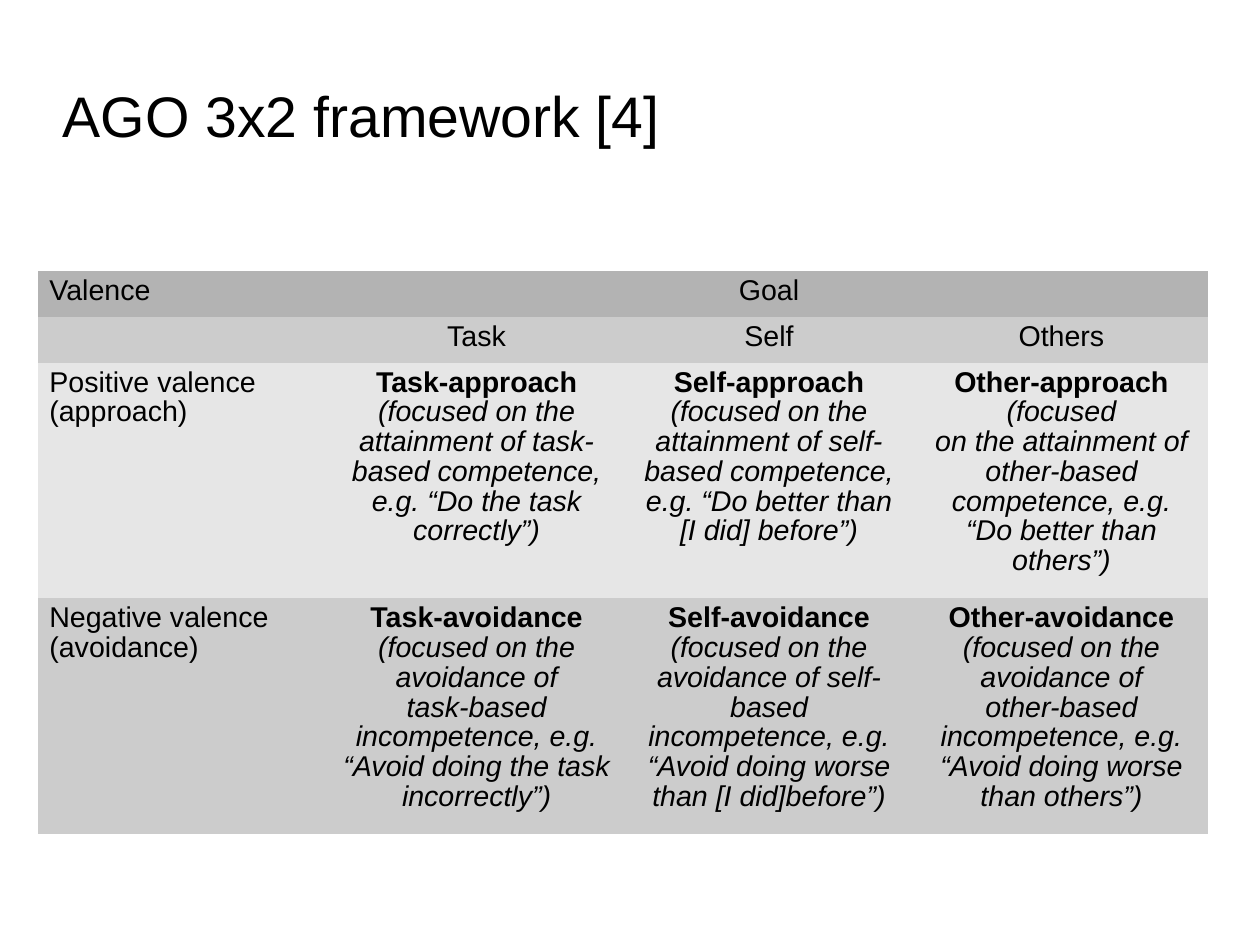
"""Build the slide showing the AGO 3x2 framework as a table of valence by goal."""
import pptx
import pptx.dml.color
import pptx.enum.text
import pptx.oxml.ns
import pptx.text.text
import pptx.util

Pt = pptx.util.Pt
BLACK = pptx.dml.color.RGBColor(0x00, 0x00, 0x00)
DARK_GREY = pptx.dml.color.RGBColor(0xB3, 0xB3, 0xB3)
MID_GREY = pptx.dml.color.RGBColor(0xCC, 0xCC, 0xCC)
LIGHT_GREY = pptx.dml.color.RGBColor(0xE6, 0xE6, 0xE6)
NO_STYLE_NO_GRID = "{2D5ABB26-0587-4C30-8999-92F81FD0307C}"
COLUMN_WIDTH = 184.25

FRAMEWORK = [
    (27.5, DARK_GREY, ["Valence", "", "Goal", ""]),
    (27.5, MID_GREY, ["", "Task", "Self", "Others"]),
    (148.5, LIGHT_GREY, [
        "Positive valence (approach)",
        "Task-approach (focused on the attainment of task-based competence, "
        "e.g. “Do the task\ncorrectly”)",
        "Self-approach\n(focused on the attainment of self-\n"
        "based competence, e.g. “Do better than [I did] before”)",
        "Other-approach\n(focused\non the attainment of other-based competence, "
        "e.g. “Do better than\nothers”)",
    ]),
    (148.5, MID_GREY, [
        "Negative valence (avoidance)",
        "Task-avoidance\n(focused on the avoidance of\n"
        "task-based incompetence, e.g. “Avoid doing the task incorrectly”)",
        "Self-avoidance\n(focused on the avoidance of self-based incompetence, e.g.\n"
        "“Avoid doing worse than [I did]before”)",
        "Other-avoidance\n(focused on the avoidance of\n"
        "other-based incompetence, e.g. “Avoid doing worse than others”)",
    ]),
]


def format_paragraph(paragraph, size):
    paragraph.line_spacing = 0.93
    end_font = pptx.text.text.Font(paragraph._p.get_or_add_endParaRPr())
    for font in [run.font for run in paragraph.runs] + [end_font]:
        font.name = "Arial"
        font.size = Pt(size)
        font.color.rgb = BLACK


presentation = pptx.Presentation()
presentation.slide_width = Pt(793.75)
presentation.slide_height = Pt(595.25)
slide = presentation.slides.add_slide(presentation.slide_layouts[6])

title = slide.shapes.add_textbox(Pt(39.6), Pt(33.1), Pt(594), Pt(80.6)).text_frame
title.word_wrap = True
title.vertical_anchor = pptx.enum.text.MSO_ANCHOR.MIDDLE
title.margin_left = title.margin_right = title.margin_bottom = 0
title.margin_top = Pt(2.9)
title.text = "AGO 3x2 framework [4]"
format_paragraph(title.paragraphs[0], 36)

framework = slide.shapes.add_table(
    4, 4, Pt(23.9), Pt(170.7), Pt(4 * COLUMN_WIDTH), Pt(352)).table
framework.first_row = framework.horz_banding = False
style_id = framework._tbl.tblPr.find(pptx.oxml.ns.qn("a:tableStyleId"))
style_id.text = NO_STYLE_NO_GRID
for column in framework.columns:
    column.width = Pt(COLUMN_WIDTH)

for row_index, (height, shade, texts) in enumerate(FRAMEWORK):
    framework.rows[row_index].height = Pt(height)
    for column_index, text in enumerate(texts):
        cell = framework.cell(row_index, column_index)
        cell.fill.solid()
        cell.fill.fore_color.rgb = shade
        cell.margin_left = cell.margin_right = Pt(7.2)
        cell.margin_top = cell.margin_bottom = Pt(3.6)
        cell.text_frame.text = text
        is_goal = row_index > 1 and column_index > 0
        for line_index, paragraph in enumerate(cell.text_frame.paragraphs):
            if column_index > 0:
                paragraph.alignment = pptx.enum.text.PP_ALIGN.CENTER
            if is_goal and line_index == 0:
                name, space, description = paragraph.text.partition(" ")
                paragraph.text = name + space
                paragraph.runs[0].font.bold = True
                if description:
                    focus = paragraph.add_run()
                    focus.text = description
                    focus.font.italic = True
            elif is_goal:
                paragraph.runs[0].font.italic = True
            format_paragraph(paragraph, 18)

presentation.save("out.pptx")
